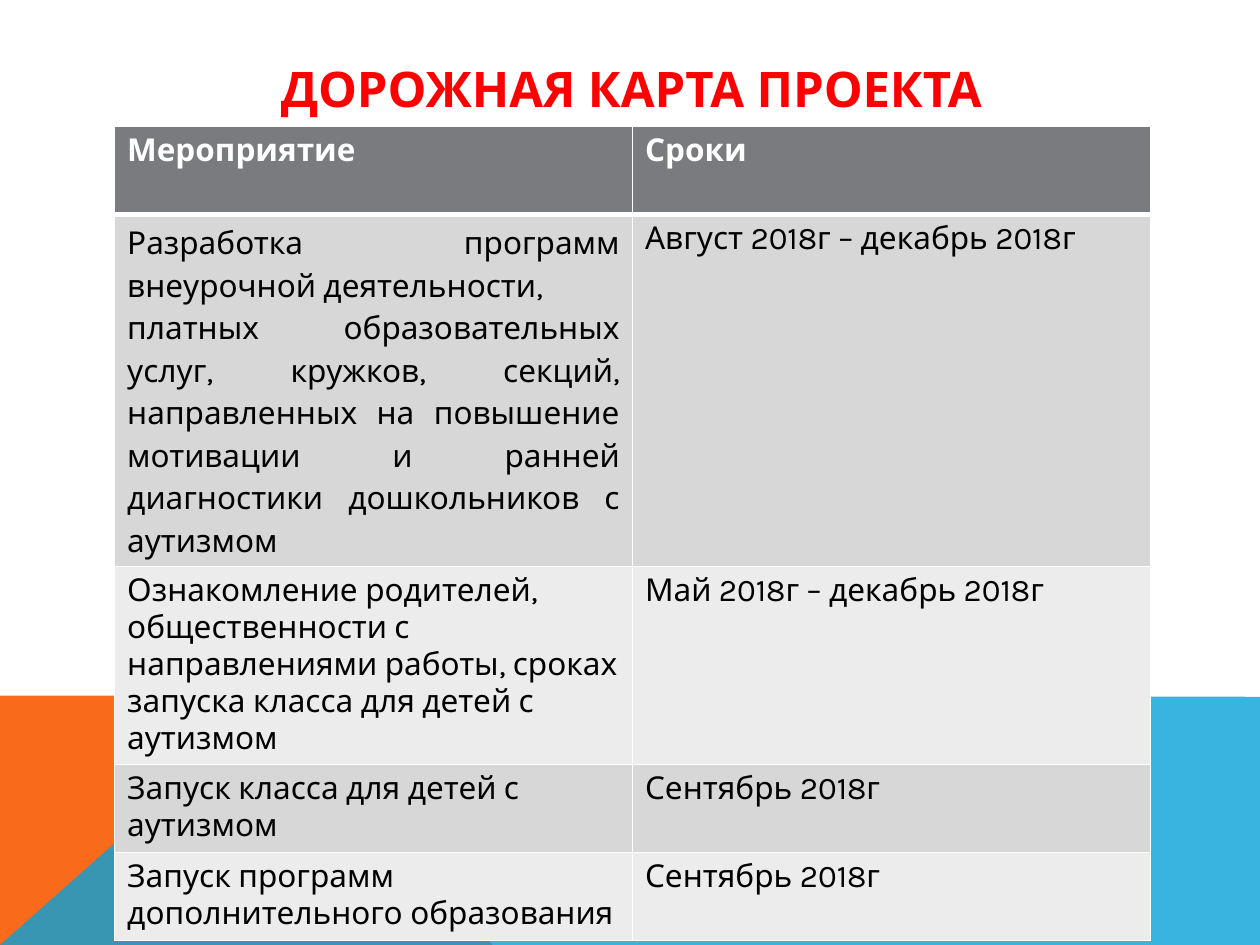
from lxml.etree import SubElement
from pptx import Presentation
from pptx.dml.color import RGBColor
from pptx.enum.text import MSO_ANCHOR, PP_ALIGN
from pptx.oxml.ns import qn
from pptx.util import Inches, Pt

FONT = "Karla"
COLORS = {
    "orange": "F96A1B", "blue": "08A1D9", "title": "FF0000",
    "header": "797B7E", "dark_band": "D7D7D8", "light_band": "ECECEC",
    "white": "FFFFFF", "black": "000000",
}
HEADER = ("Мероприятие", "Сроки")
ROADMAP = [
    ("Разработка программ внеурочной деятельности,\n"
     "платных образовательных услуг, кружков, секций, направленных на "
     "повышение мотивации и ранней диагностики дошкольников с аутизмом",
     "Август 2018г – декабрь 2018г"),
    ("Ознакомление родителей, общественности с направлениями работы, "
     "сроках запуска класса для детей с аутизмом",
     "Май 2018г – декабрь 2018г"),
    ("Запуск класса для детей с аутизмом", "Сентябрь 2018г"),
    ("Запуск программ дополнительного образования", "Сентябрь 2018г"),
]
ROW_HEIGHTS = (0.7, 2.79, 1.57, 0.7, 0.7)


def rgb(name):
    return RGBColor.from_string(COLORS[name])


def write(tf, text, size=18, color="black", bold=False, align=None, spacing=None):
    """Fill a text frame, one paragraph for each line of text."""
    for i, line in enumerate(text.split("\n")):
        p = tf.paragraphs[0] if i == 0 else tf.add_paragraph()
        p.alignment = align
        p.line_spacing = spacing
        r = p.add_run()
        r.text = line
        r.font.name = FONT
        r.font.size = Pt(size)
        r.font.bold = bold
        r.font.color.rgb = rgb(color)


def add_polygon(s, points, color, opacity=100):
    (x, y), *rest = [(Inches(px), Inches(py)) for px, py in points]
    builder = s.shapes.build_freeform(x, y)
    builder.add_line_segments(rest, close=True)
    sp = builder.convert_to_shape()
    sp.shadow.inherit = False
    sp.line.fill.background()
    sp.fill.solid()
    sp.fill.fore_color.rgb = rgb(color)
    if opacity < 100:
        clr = sp.fill._xPr.find(qn("a:solidFill"))[0]
        SubElement(clr, qn("a:alpha"), val=str(opacity * 1000))


def add_title(s, text):
    sp = s.shapes.title
    sp.left, sp.top, sp.width, sp.height = map(Inches, (0.9, 0.4, 8.22, 0.6))
    tf = sp.text_frame
    tf.word_wrap = True
    tf.vertical_anchor = MSO_ANCHOR.MIDDLE
    write(tf, text, size=28, color="title", bold=True, align=PP_ALIGN.CENTER)


def set_borders(cell, bottom=1):
    tcPr = cell._tc.get_or_add_tcPr()
    for i, (side, width) in enumerate(zip("LRTB", (1, 1, 1, bottom))):
        ln = SubElement(tcPr, qn(f"a:ln{side}"), w=str(Pt(width)))
        fill = SubElement(ln, qn("a:solidFill"))
        SubElement(fill, qn("a:srgbClr"), val=COLORS["white"])
        tcPr.insert(i, ln)


def add_roadmap(s):
    rows = [HEADER, *ROADMAP]
    table = s.shapes.add_table(len(rows), len(HEADER), Inches(0.91), Inches(1),
                               Inches(8.22), Inches(sum(ROW_HEIGHTS))).table
    for i, (texts, height) in enumerate(zip(rows, ROW_HEIGHTS)):
        table.rows[i].height = Inches(height)
        is_header = i == 0
        band = "header" if is_header else "dark_band" if i % 2 else "light_band"
        for j, text in enumerate(texts):
            cell = table.cell(i, j)
            cell.fill.solid()
            cell.fill.fore_color.rgb = rgb(band)
            # The first and second rows share the heavy line under the header
            set_borders(cell, bottom=3 if is_header else 1)
            justified = "\n" in text
            write(cell.text_frame, text, bold=is_header,
                  color="white" if is_header else "black",
                  align=PP_ALIGN.JUSTIFY if justified else None,
                  spacing=1.15 if justified else None)


def main():
    prs = Presentation()
    prs.slide_width, prs.slide_height = Inches(10), Inches(7.5)
    s = prs.slides.add_slide(prs.slide_layouts[5])

    # Coloured bands along the bottom
    add_polygon(s, [(0, 7.5), (0, 5.52), (2.23, 5.52), (3.91, 7.5)], "orange")
    add_polygon(s, [(0, 7.5), (2.23, 5.52), (10, 5.53), (10, 7.5)], "blue",
                opacity=80)

    # Title and schedule
    add_title(s, "ДОРОЖНАЯ КАРТА ПРОЕКТА")
    add_roadmap(s)
    prs.save("out.pptx")


if __name__ == "__main__":
    main()
